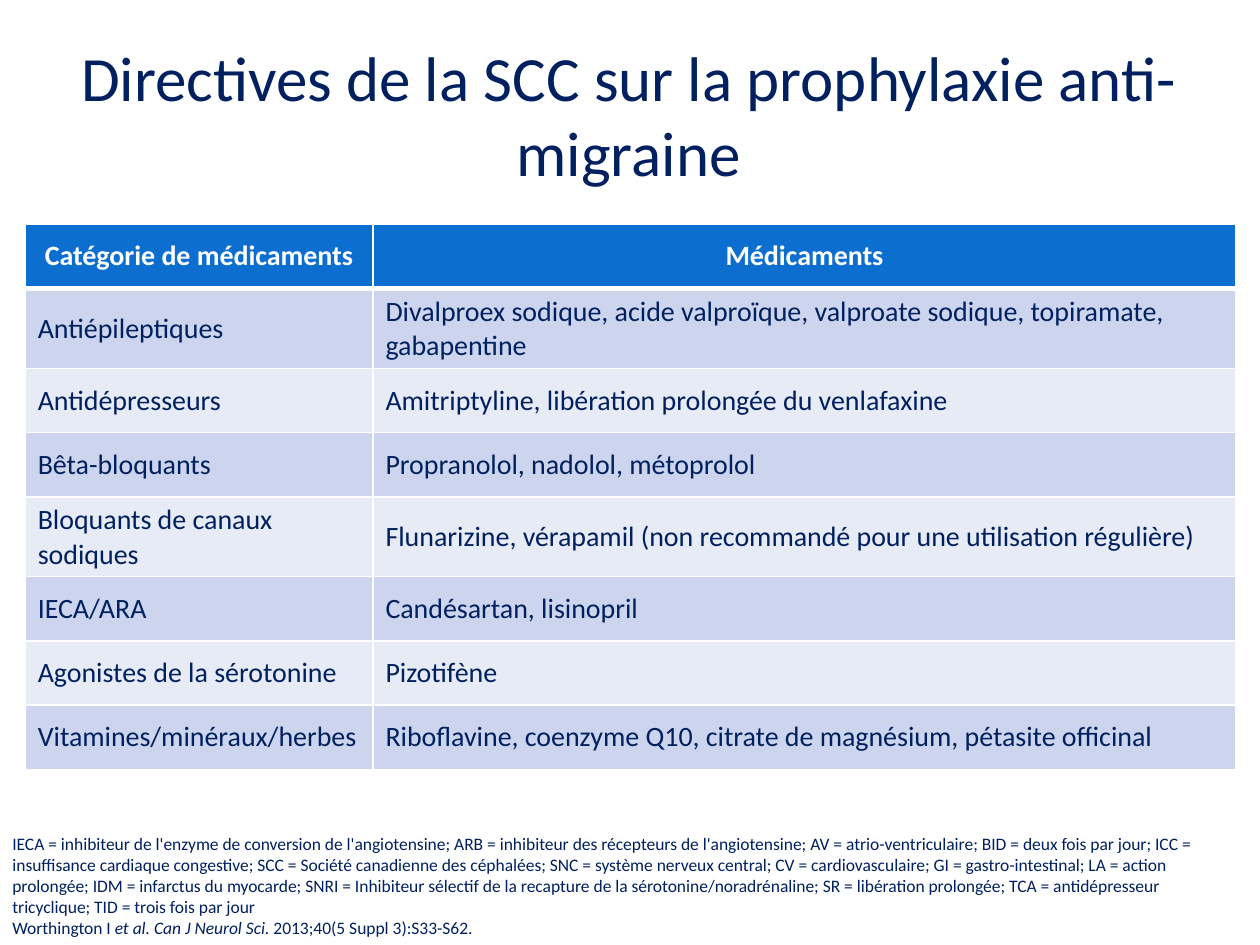
from lxml import etree
from pptx import Presentation
from pptx.dml.color import RGBColor
from pptx.enum.text import MSO_ANCHOR, PP_ALIGN
from pptx.oxml.ns import qn
from pptx.util import Inches, Pt

MIDDLE = MSO_ANCHOR.MIDDLE
LEFT, CENTER = PP_ALIGN.LEFT, PP_ALIGN.CENTER
TITLE_ONLY = 5
FONT = "Calibri"
COLORS = {"navy": "002060", "white": "FFFFFF", "head": "0C6FCF",
          "odd": "CCD5ED", "even": "E7EBF6"}

ROWS = [
    ("Catégorie de médicaments", "Médicaments"),
    ("Antiépileptiques", "Divalproex sodique, acide valproïque, valproate "
     "sodique, topiramate, gabapentine"),
    ("Antidépresseurs", "Amitriptyline, libération prolongée du venlafaxine"),
    ("Bêta-bloquants", "Propranolol, nadolol, métoprolol"),
    ("Bloquants de canaux sodiques",
     "Flunarizine, vérapamil (non recommandé pour une utilisation régulière)"),
    ("IECA/ARA", "Candésartan, lisinopril"),
    ("Agonistes de la sérotonine", "Pizotifène"),
    ("Vitamines/minéraux/herbes",
     "Riboflavine, coenzyme Q10, citrate de magnésium, pétasite officinal"),
]
ABBREVS = (
    "IECA = inhibiteur de l'enzyme de conversion de l'angiotensine; "
    "ARB = inhibiteur des récepteurs de l'angiotensine; "
    "AV = atrio-ventriculaire; BID = deux fois par jour; "
    "ICC = insuffisance cardiaque congestive; "
    "SCC = Société canadienne des céphalées; "
    "SNC = système nerveux central; CV = cardiovasculaire; "
    "GI = gastro-intestinal; LA = action prolongée; "
    "IDM = infarctus du myocarde; "
    "SNRI = Inhibiteur sélectif de la recapture de la "
    "sérotonine/noradrénaline; SR = libération prolongée; "
    "TCA = antidépresseur tricyclique; TID = trois fois par jour"
)


def write(par, text, size=16, color="navy", bold=False, italic=False,
          align=LEFT):
    """Add one formatted run to a paragraph."""
    par.alignment = align
    run = par.add_run()
    run.text = text
    font = run.font
    font.name, font.size = FONT, Pt(size)
    font.bold, font.italic = bold, italic
    font.color.rgb = RGBColor.from_string(COLORS[color])


def place(shape, box):
    shape.left, shape.top, shape.width, shape.height = map(Inches, box)


def edge(cell, side, width):
    """Draw one white cell border; call before the cell is filled."""
    line = etree.SubElement(cell._tc.get_or_add_tcPr(), qn("a:" + side),
                            w=str(Pt(width)))
    fill = etree.SubElement(line, qn("a:solidFill"))
    etree.SubElement(fill, qn("a:srgbClr"), val=COLORS["white"])


def add_title(slide, box):
    title = slide.shapes.title
    place(title, box)
    frame = title.text_frame
    frame.word_wrap = True
    frame.vertical_anchor = MIDDLE
    write(frame.paragraphs[0],
          "Directives de la SCC sur la prophylaxie anti-migraine",
          size=36, align=CENTER)


def add_drugs(slide, box, first):
    """Table whose first column has the given width."""
    table = slide.shapes.add_table(len(ROWS), 2, *map(Inches, box)).table
    for col, width in zip(table.columns, (first, box[2] - first)):
        col.width = Inches(width)
    for r, texts in enumerate(ROWS):
        table.rows[r].height = Inches(0.51)
        head = r == 0
        shade = "head" if head else "odd" if r % 2 else "even"
        for c, text in enumerate(texts):
            cell = table.cell(r, c)
            for side in ("lnL", "lnR", "lnT", "lnB"):
                thick = (head and side == "lnB") or (r == 1 and side == "lnT")
                edge(cell, side, 3 if thick else 1)
            cell.fill.solid()
            cell.fill.fore_color.rgb = RGBColor.from_string(COLORS[shade])
            cell.vertical_anchor = MIDDLE
            write(cell.text_frame.paragraphs[0], text, bold=head,
                  color="white" if head else "navy",
                  align=CENTER if head else LEFT)


def add_notes(slide, box):
    """Abbreviations and reference below the table."""
    frame = slide.shapes.add_textbox(*map(Inches, box)).text_frame
    frame.word_wrap = True
    write(frame.paragraphs[0], ABBREVS, size=10)
    source = frame.add_paragraph()
    write(source, "Worthington I ", size=10)
    write(source, "et al. Can J Neurol Sci. ", size=10, italic=True)
    write(source, "2013;40(5 Suppl 3):S33-S62.", size=10)


def main():
    deck = Presentation()
    deck.slide_width, deck.slide_height = Inches(10), Inches(7.5)
    slide = deck.slides.add_slide(deck.slide_layouts[TITLE_ONLY])
    add_title(slide, (0.49, 0.28, 9, 1.25))
    add_notes(slide, (0, 6.56, 9.86, 0.94))
    add_drugs(slide, (0.2, 1.78, 9.61, 4.08), first=2.76)
    deck.save("out.pptx")


if __name__ == "__main__":
    main()
